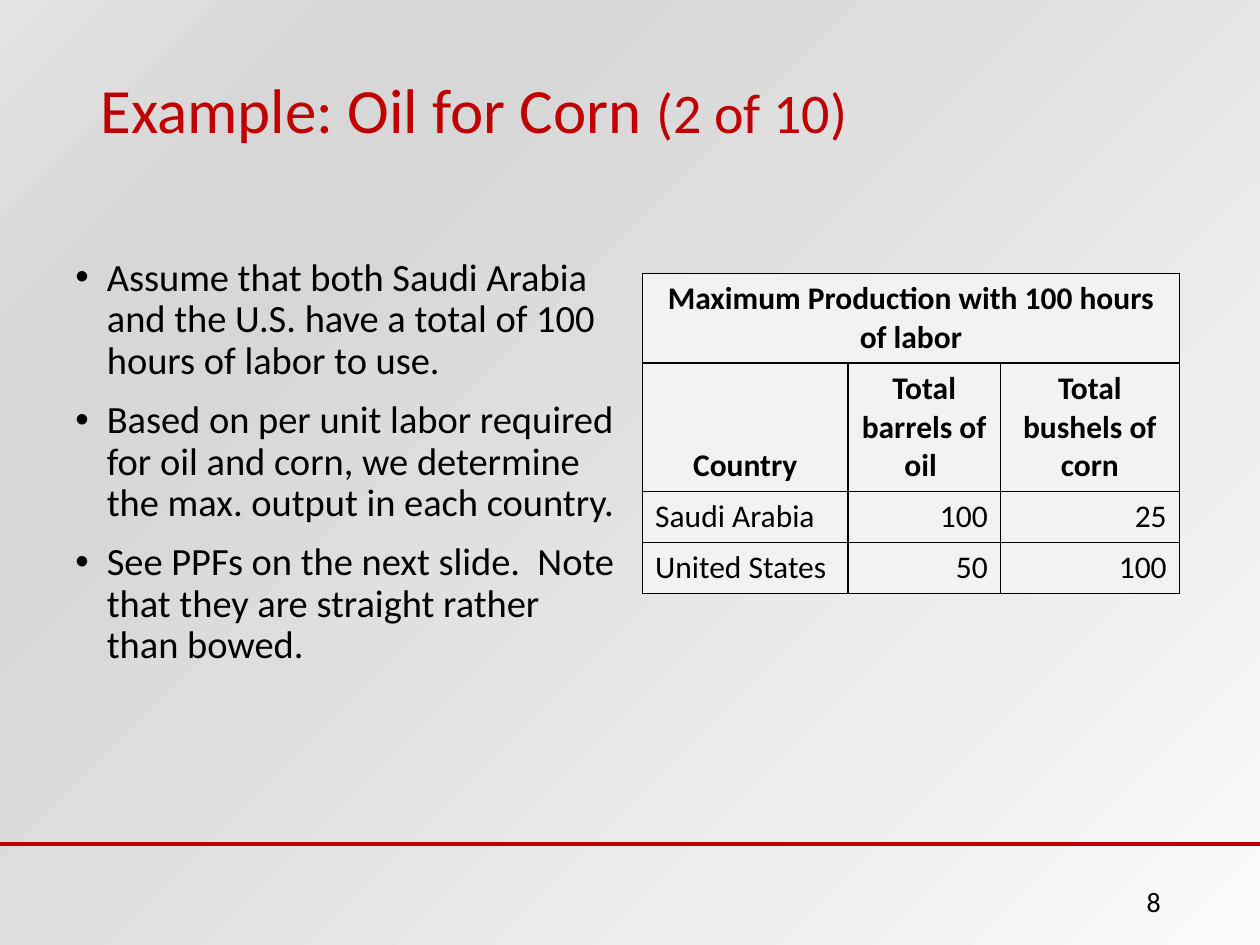
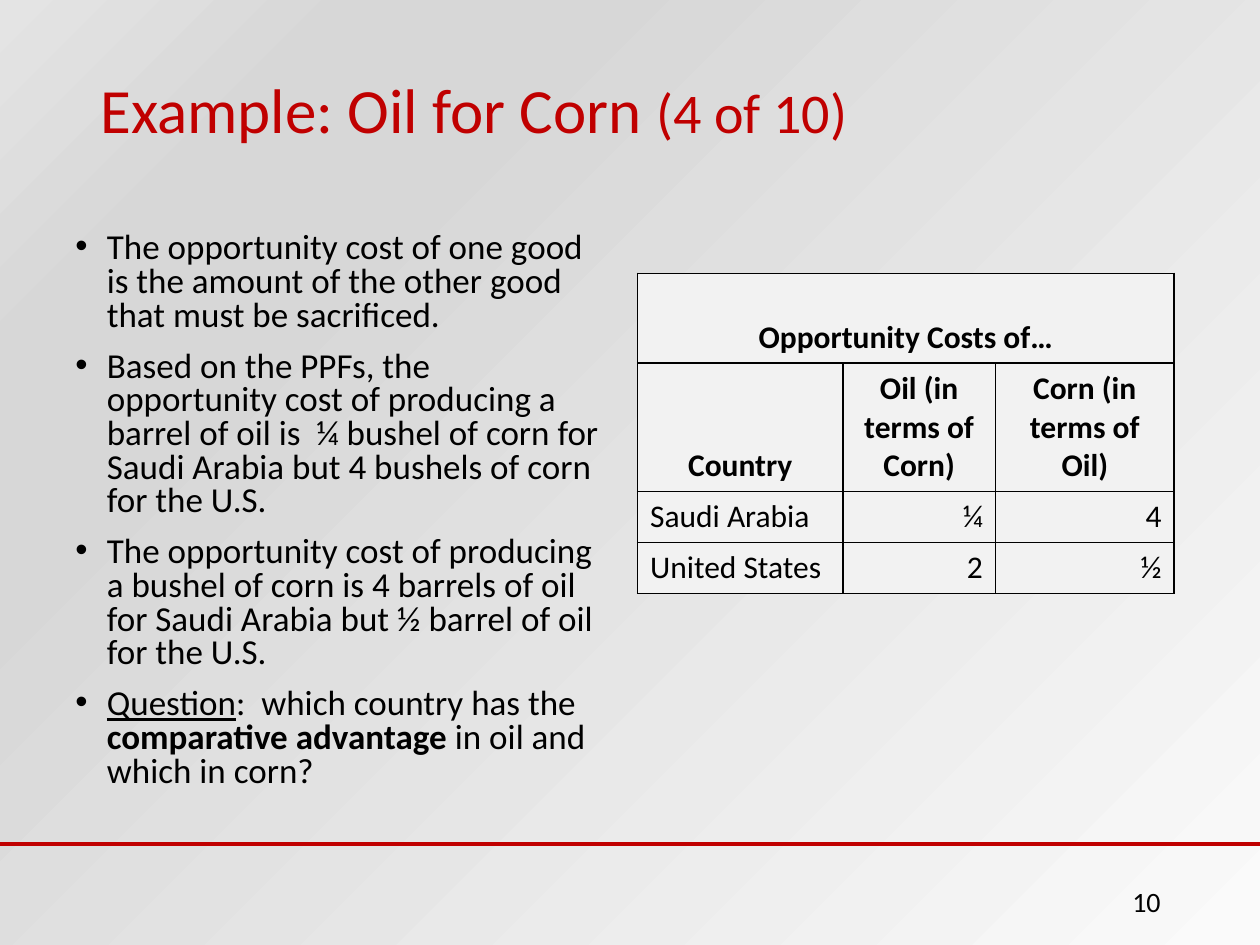
import dataclasses

import pptx
import pptx.dml.color
import pptx.enum.shapes
import pptx.enum.text
import pptx.oxml
import pptx.oxml.ns
import pptx.util

ALIGN = pptx.enum.text.PP_ALIGN
ANCHOR = pptx.enum.text.MSO_ANCHOR
NS = pptx.oxml.ns.nsdecls("a")


@dataclasses.dataclass(frozen=True)
class Theme:
    font: str = "Calibri"
    red: str = "C00000"
    black: str = "000000"
    cell: str = "F2F2F2"
    backdrop: tuple = ((0, "FAFAFA"), (74, "D7D7D7"), (83, "D7D7D7"), (100, "E4E4E4"))
    title: int = 36
    counter: int = 32
    table: int = 18
    number: int = 16


T = Theme()

# The slide is a grid of 100 columns by 75 rows
COLS, ROWS = 100, 75
UNIT = pptx.util.Inches(0.1)
TABLE_COLS = (16.3, 12.1, 14.2)
TABLE_ROWS = (7.1, 10.2, 4.05, 4.05)


def grid(*cells):
    return [round(c * UNIT) for c in cells]


def rgb(value):
    return pptx.dml.color.RGBColor.from_string(value)


def assign(obj, formats):
    for name, value in formats.items():
        setattr(obj, name, value)


# Text
def add_run(p, text, size, color=T.black, **formats):
    r = p.add_run()
    r.text = text
    assign(r.font, {"name": T.font, "size": pptx.util.Pt(size), **formats})
    r.font.color.rgb = rgb(color)


def add_text(s, box, anchor=ANCHOR.TOP):
    tf = s.shapes.add_textbox(*grid(*box)).text_frame
    assign(tf, {"word_wrap": True, "vertical_anchor": anchor})
    return tf


def add_title(s, title, counter):
    p = add_text(s, (7, 3, 86, 12), ANCHOR.MIDDLE).paragraphs[0]
    p.line_spacing = 0.9
    add_run(p, title, T.title, T.red)
    add_run(p, counter, T.counter, T.red)


def add_bullets(s, box, bullets, size, spacing):
    """Each bullet is a list of (text, font formats) pieces."""
    tf = add_text(s, box)
    indent = pptx.util.Inches(0.25)
    for i, pieces in enumerate(bullets):
        p = tf.add_paragraph() if i else tf.paragraphs[0]
        assign(p, {"line_spacing": spacing, "space_before": pptx.util.Pt(10)})
        pPr = p._p.get_or_add_pPr()
        pPr.set("marL", str(indent))
        pPr.set("indent", str(-indent))
        pPr.append(pptx.oxml.parse_xml(f'<a:buFont {NS} typeface="Arial"/>'))
        pPr.append(pptx.oxml.parse_xml(f'<a:buChar {NS} char="•"/>'))
        for text, formats in pieces:
            add_run(p, text, size, **formats)


# Footer
def add_footer(s, number):
    line = s.shapes.add_connector(
        pptx.enum.shapes.MSO_CONNECTOR.STRAIGHT, *grid(0, 67, COLS, 67))
    line.line.color.rgb = rgb(T.red)
    line.line.width = pptx.util.Pt(2)
    line._element.spPr.append(pptx.oxml.parse_xml(f"<a:effectLst {NS}/>"))
    p = add_text(s, (70.6, 69.5, 22.5, 4), ANCHOR.MIDDLE).paragraphs[0]
    p.alignment = ALIGN.RIGHT
    add_run(p, number, T.number)


# Table
def style_cell(cell):
    tcPr = cell._tc.get_or_add_tcPr()
    for side in ("lnL", "lnR", "lnT", "lnB"):
        tcPr.append(pptx.oxml.parse_xml(
            f'<a:{side} {NS} w="12700"><a:solidFill><a:srgbClr val="{T.black}"/>'
            f"</a:solidFill></a:{side}>"))
    cell.fill.solid()
    cell.fill.fore_color.rgb = rgb(T.cell)


def add_country_table(s, left, caption, rows):
    table = s.shapes.add_table(
        len(TABLE_ROWS), len(TABLE_COLS),
        *grid(left, 21.7, sum(TABLE_COLS), sum(TABLE_ROWS))).table
    assign(table, {"first_row": False, "horz_banding": False})
    for column, width in zip(table.columns, grid(*TABLE_COLS)):
        column.width = width
    for row, height in zip(table.rows, grid(*TABLE_ROWS)):
        row.height = height
    table.cell(0, 0).merge(table.cell(0, len(TABLE_COLS) - 1))
    for i, texts in enumerate([(caption, "", "")] + rows):
        for j, text in enumerate(texts):
            cell = table.cell(i, j)
            style_cell(cell)
            header = i < 2
            cell.vertical_anchor = ANCHOR.BOTTOM if header else ANCHOR.TOP
            p = cell.text_frame.paragraphs[0]
            p.alignment = ALIGN.CENTER if header else ALIGN.RIGHT if j else ALIGN.LEFT
            if text:
                add_run(p, text, T.table, bold=header)


# Shared backdrop: a radial gradient centred on the bottom right corner
def set_backdrop(master):
    master.background.fill.gradient()
    old = master.element.find(".//" + pptx.oxml.ns.qn("p:bgPr")).find(
        pptx.oxml.ns.qn("a:gradFill"))
    stops = "".join(f'<a:gs pos="{pos * 1000}"><a:srgbClr val="{color}"/></a:gs>'
                    for pos, color in T.backdrop)
    old.getparent().replace(old, pptx.oxml.parse_xml(
        f'<a:gradFill {NS} rotWithShape="1"><a:gsLst>{stops}</a:gsLst>'
        '<a:path path="circle"><a:fillToRect l="100000" t="100000"/></a:path>'
        "</a:gradFill>"))


def add_example_slide(prs, counter, number):
    s = prs.slides.add_slide(prs.slide_layouts[6])
    add_title(s, "Example: Oil for Corn ", counter)
    add_footer(s, number)
    return s


def main():
    prs = pptx.Presentation()
    prs.slide_width, prs.slide_height = grid(COLS, ROWS)
    set_backdrop(prs.slide_master)

    # Maximum production
    s = add_example_slide(prs, "(2 of 10)", "8")
    add_bullets(s, (5, 20, 45, 43), [
        [("Assume that both Saudi Arabia and the U.S. have a total of 100 hours "
          "of labor to use.", {})],
        [("Based on per unit labor required for oil and corn, we determine the "
          "max. output in each country.", {})],
        [("See PPFs on the next slide.  Note that they are straight rather than "
          "bowed.", {})],
    ], size=22, spacing=0.9)
    add_country_table(s, 51, "Maximum Production with 100 hours of labor", [
        ("Country", "Total barrels of oil ", "Total bushels of corn"),
        ("Saudi Arabia", "100", "25"),
        ("United States", "50", "100"),
    ])

    # Opportunity costs
    s = add_example_slide(prs, "(4 of 10)", "10")
    add_bullets(s, (5, 18, 44, 48), [
        [("The opportunity cost of one good is the amount of the other good that "
          "must be sacrificed.", {})],
        [("Based on the PPFs, the opportunity cost of producing a barrel of oil "
          "is  ¼ bushel of corn for Saudi Arabia but 4 bushels of corn for the "
          "U.S.", {})],
        [("The opportunity cost of producing a bushel of corn is 4 barrels of oil "
          "for Saudi Arabia but ½ barrel of oil for the U.S.", {})],
        [("Question", {"underline": True}), (":  which country has the ", {}),
         ("comparative advantage", {"bold": True}),
         (" in oil and which in corn?", {})],
    ], size=20, spacing=0.8)
    add_country_table(s, 50.6, "Opportunity Costs of…", [
        ("Country", "Oil (in terms of Corn)", "Corn (in terms of Oil)"),
        ("Saudi Arabia", "¼", "4"),
        ("United States", "2", "½"),
    ])

    prs.save("out.pptx")


if __name__ == "__main__":
    main()
